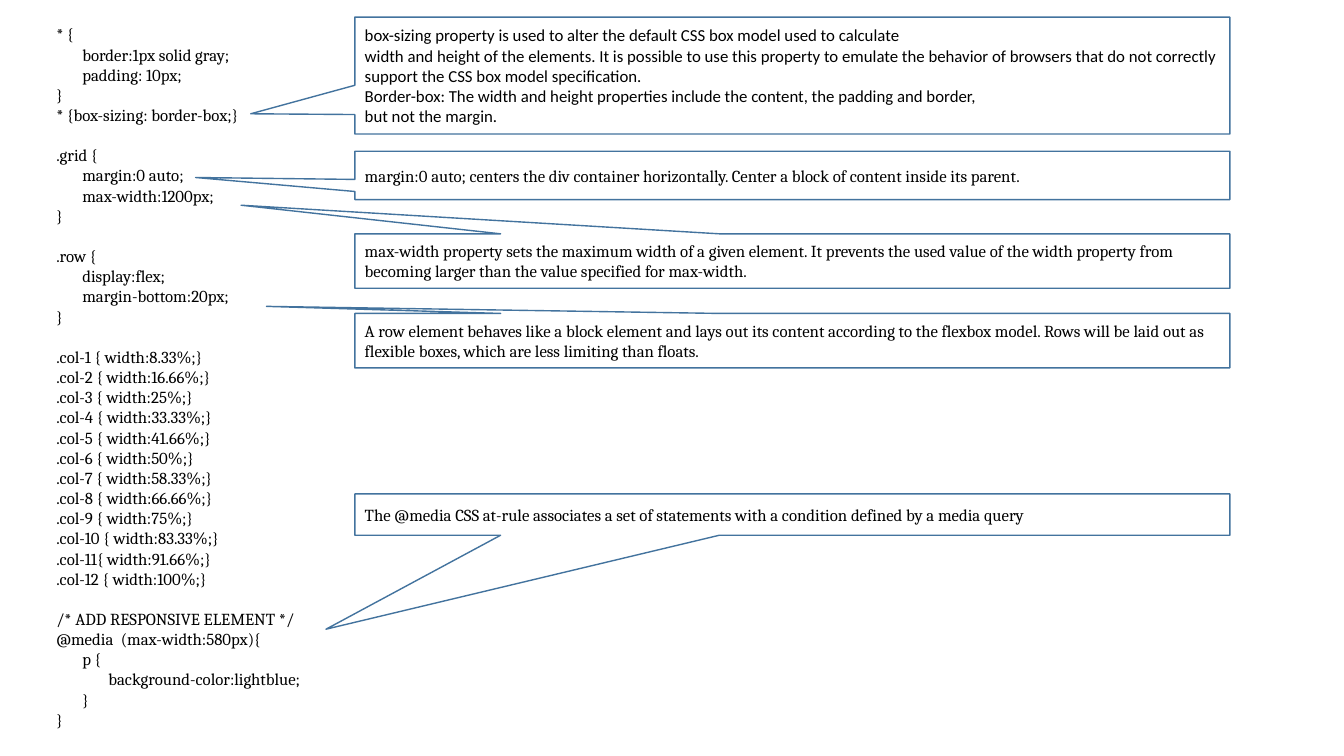
from dataclasses import dataclass

from pptx import Presentation
from pptx.dml.color import RGBColor
from pptx.enum.shapes import MSO_SHAPE
from pptx.enum.text import MSO_ANCHOR, MSO_AUTO_SIZE, PP_ALIGN
from pptx.util import Pt

CALLOUT = MSO_SHAPE.RECTANGULAR_CALLOUT
MIDDLE = MSO_ANCHOR.MIDDLE
GROW = MSO_AUTO_SIZE.SHAPE_TO_FIT_TEXT
LEFT = PP_ALIGN.LEFT


@dataclass(frozen=True)
class Theme:
    ink: RGBColor = RGBColor(0, 0, 0)
    edge: RGBColor = RGBColor(0x43, 0x73, 0x9E)
    size: float = 12
    serif: str = "Cambria"
    sans: str = "Calibri"
    indent: float = 18.6
    gap: float = 14.4


@dataclass(frozen=True)
class Line:
    text: str
    level: int = 0
    gap: bool = False


@dataclass(frozen=True)
class Note:
    top: float
    height: float
    tip: tuple[float, float]
    texts: tuple[str, ...]
    font: str


THEME = Theme()
NOTE_LEFT, NOTE_WIDTH = 253.44, 625


def col_rule(num: int) -> str:
    """Return the rule for a column that spans num twelfths, cut to two decimals."""
    space = "" if num == 11 else " "
    return f".col-{num}{space}{{ width:{num * 10000 // 12 / 100:g}%;}}"


# Style sheet, one line per paragraph
CODE = [
    Line("* {"),
    Line("border:1px solid gray;", 1),
    Line("padding: 10px;", 1),
    Line("}"),
    Line("* {box-sizing: border-box;}"),
    Line(".grid {", gap=True),
    Line("margin:0 auto;", 1),
    Line("max-width:1200px;", 1),
    Line("}"),
    Line(".row {", gap=True),
    Line("display:flex;", 1),
    Line("margin-bottom:20px;", 1),
    Line("}"),
    *(Line(col_rule(num), gap=num == 1) for num in range(1, 13)),
    Line("/* ADD RESPONSIVE ELEMENT */", gap=True),
    Line("@media  (max-width:580px){"),
    Line("p {", 1),
    Line("background-color:lightblue;", 2),
    Line("}", 1),
    Line("}"),
]

# Callouts, each with its tip relative to the box centre
NOTES = [
    Note(12.24, 83.52, (-0.619, 0.327), (
        "box-sizing property is used to alter the default CSS box model used to calculate",
        "width and height of the elements. It is possible to use this property to emulate "
        "the behavior of browsers that do not correctly support the CSS box model specification.",
        "Border-box: The width and height properties include the content, the padding and border,",
        "but not the margin.",
    ), THEME.sans),
    Note(108, 34.56, (-0.682, 0.044), (
        "margin:0 auto; centers the div container horizontally. "
        "Center a block of content inside its parent.",
    ), THEME.serif),
    Note(167.04, 38.88, (-0.63, -1.026), (
        "max-width property sets the maximum width of a given element. It prevents the used value "
        "of the width property from becoming larger than the value specified for max-width.",
    ), THEME.serif),
    Note(223.92, 38.88, (-0.601, -0.63), (
        "A row element behaves like a block element and lays out its content according to the "
        "flexbox model. Rows will be laid out as flexible boxes, which are less limiting than floats.",
    ), THEME.serif),
    Note(352.8, 29.52, (-0.533, 2.775), (
        "The @media CSS at-rule associates a set of statements "
        "with a condition defined by a media query",
    ), THEME.serif),
]


def apply(target, form: dict) -> None:
    for name, value in form.items():
        setattr(target, name, value)


def write(frame, lines: list[Line], font: str) -> None:
    for i, line in enumerate(lines):
        para = frame.paragraphs[0] if i == 0 else frame.add_paragraph()
        apply(para, {"alignment": LEFT, "space_before": Pt(THEME.gap if line.gap else 0)})
        if line.level:
            props = para._p.get_or_add_pPr()
            props.set("marL", str(Pt(THEME.indent * line.level)))
            props.set("indent", "0")
        run = para.add_run()
        run.text = line.text
        apply(run.font, {"name": font, "size": Pt(THEME.size)})
        run.font.color.rgb = THEME.ink


def draw_code(slide, lines: list[Line]) -> None:
    box = slide.shapes.add_textbox(Pt(33.12), Pt(13.68), Pt(366.48), Pt(516.24))
    apply(box.text_frame, {"word_wrap": True, "auto_size": GROW})
    write(box.text_frame, lines, THEME.serif)


def draw_note(slide, note: Note) -> None:
    box = slide.shapes.add_shape(
        CALLOUT, Pt(NOTE_LEFT), Pt(note.top), Pt(NOTE_WIDTH), Pt(note.height))
    box.adjustments[0], box.adjustments[1] = note.tip
    box.shadow.inherit = False
    box.fill.background()
    box.line.color.rgb = THEME.edge
    box.line.width = Pt(1)
    apply(box.text_frame, {"word_wrap": True, "vertical_anchor": MIDDLE})
    write(box.text_frame, [Line(text) for text in note.texts], note.font)


def main() -> None:
    deck = Presentation()
    apply(deck, {"slide_width": Pt(960), "slide_height": Pt(540)})
    slide = deck.slides.add_slide(deck.slide_layouts[6])
    draw_code(slide, CODE)
    for note in NOTES:
        draw_note(slide, note)
    deck.save("out.pptx")


if __name__ == "__main__":
    main()
